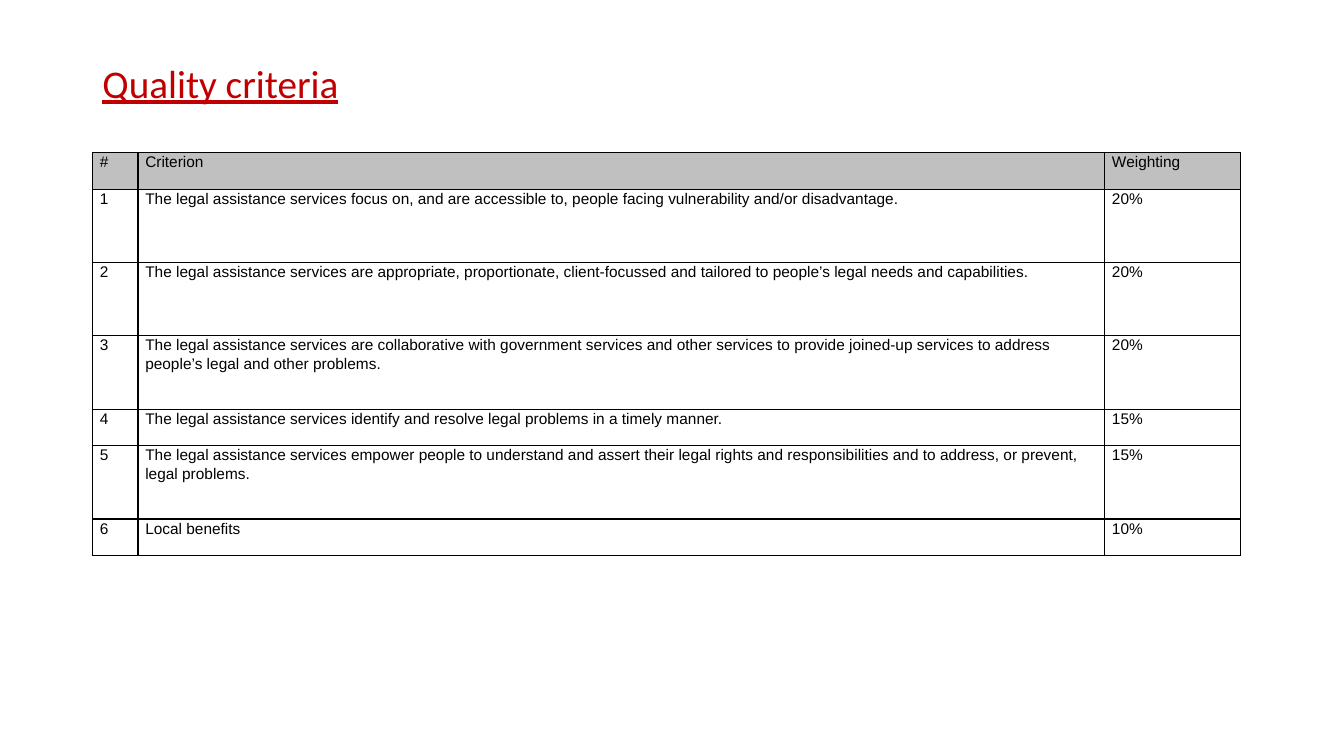
from lxml.etree import SubElement as Sub
from pptx import Presentation
from pptx.dml.color import RGBColor as Rgb
from pptx.enum.text import MSO_ANCHOR as Anchor, MSO_AUTO_SIZE as Fit, PP_ALIGN as Align
from pptx.oxml.ns import qn
from pptx.util import Pt

HEX = {"title": "C00000", "head": "C0C0C0", "text": "000000", "rule": "000000"}
WIDTHS = [32.4, 690.5, 97.2]
SHORT, TALL = 26.1, 52.4
HEAD = ("#", "Criterion", "Weighting")
ITEMS = [
    ("The legal assistance services focus on, and are accessible to, people facing "
     "vulnerability and/or disadvantage.", "20%", TALL),
    ("The legal assistance services are appropriate, proportionate, client-focussed and "
     "tailored to people’s legal needs and capabilities.", "20%", TALL),
    ("The legal assistance services are collaborative with government services and other "
     "services to provide joined-up services to address people’s legal and other problems.",
     "20%", TALL),
    ("The legal assistance services identify and resolve legal problems in a timely manner.",
     "15%", SHORT),
    ("The legal assistance services empower people to understand and assert their legal "
     "rights and responsibilities and to address, or prevent, legal problems.", "15%", TALL),
    ("Local benefits", "10%", SHORT),
]


def style(para, face, size, color, lead, above, below=0):
    para.alignment = Align.LEFT
    para.line_spacing = lead
    para.space_before, para.space_after = Pt(above), Pt(below)
    for run in para.runs:
        run.font.name, run.font.size = face, Pt(size)
        run.font.color.rgb = Rgb.from_string(HEX[color])


def add_title(slide, left, top, width, height):
    title = slide.shapes.title
    title.left, title.top = Pt(left), Pt(top)
    title.width, title.height = Pt(width), Pt(height)
    frame = title.text_frame
    frame.text = "Quality criteria"
    frame.word_wrap = True
    frame.auto_size = Fit.NONE
    frame.vertical_anchor = Anchor.TOP
    para = frame.paragraphs[0]
    style(para, "Calibri", 28, "title", 0.9, 10)
    para.runs[0].font.underline = True


def add_rules(cell):
    props = cell._tc.get_or_add_tcPr()
    for side in "LRTB":
        line = Sub(props, qn(f"a:ln{side}"), w=str(Pt(1)))
        fill = Sub(line, qn("a:solidFill"))
        Sub(fill, qn("a:srgbClr"), val=HEX["rule"])


def fill_cell(cell, text, head):
    cell.margin_left = cell.margin_right = Pt(5.2)
    cell.margin_top = cell.margin_bottom = 0
    cell.text_frame.text = text
    style(cell.text_frame.paragraphs[0], "Arial", 11, "text", 1.07, 3, 3)
    add_rules(cell)
    if head:
        cell.fill.solid()
        cell.fill.fore_color.rgb = Rgb.from_string(HEX["head"])
    else:
        cell.fill.background()


def add_grid(slide, left, top, width, height):
    rows = [HEAD] + [(str(i), text, share) for i, (text, share, _) in enumerate(ITEMS, 1)]
    tall = [SHORT] + [item[2] for item in ITEMS]
    table = slide.shapes.add_table(
        len(rows), len(HEAD), Pt(left), Pt(top), Pt(width), Pt(height)).table
    table.first_row = table.horz_banding = False
    for col, size in zip(table.columns, WIDTHS):
        col.width = Pt(size * width / sum(WIDTHS))
    for r, (row, size) in enumerate(zip(rows, tall)):
        table.rows[r].height = Pt(size * height / sum(tall))
        for c, text in enumerate(row):
            fill_cell(table.cell(r, c), text, r == 0)


def main():
    deck = Presentation()
    deck.slide_width, deck.slide_height = Pt(960), Pt(540)
    slide = deck.slides.add_slide(deck.slide_layouts[5])
    add_title(slide, 66, 42.5, 828, 444)
    add_grid(slide, 66.2, 109, 820.1, 287.9)
    deck.save("out.pptx")


if __name__ == "__main__":
    main()
